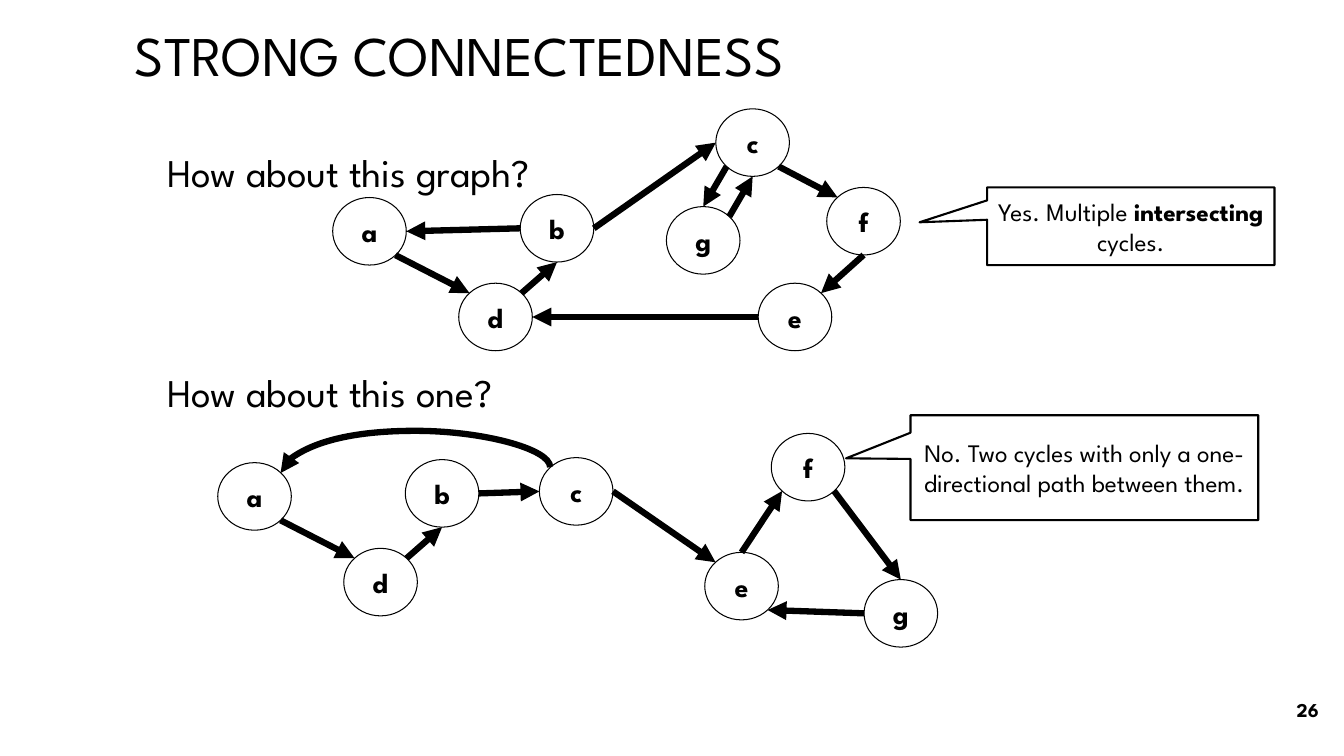
"""Build a slide that tests two directed graphs for strong connectedness."""
import math

import pptx
import pptx.dml.color
import pptx.enum.shapes
import pptx.enum.text
import pptx.oxml.ns
import pptx.util
from lxml import etree

Inches = pptx.util.Inches
SHAPE = pptx.enum.shapes.MSO_SHAPE
CONNECTOR = pptx.enum.shapes.MSO_CONNECTOR
ALIGN = pptx.enum.text.PP_ALIGN
BLACK = pptx.dml.color.RGBColor(0, 0, 0)
WHITE = pptx.dml.color.RGBColor(255, 255, 255)
FONT = "League Spartan"
NODE_WIDTH, NODE_HEIGHT = 0.73, 0.67
CURVE_RISE = 0.36

LABELS = [
    ("STRONG CONNECTEDNESS", (1.24, -0.02, 10.83, 1.12), dict(size=40)),
    ("How about this graph?", (1.56, 1.43, 10.52, 0.56), dict(size=28)),
    ("How about this one?", (1.56, 3.61, 10.52, 0.56), dict(size=28)),
    ("26", (12.58, 6.84, 0.6, 0.4), dict(size=14, bold=True, align=ALIGN.RIGHT)),
]
GRAPHS = [
    {
        "nodes": {"a": (3.3, 1.96), "b": (5.16, 1.93), "c": (7.1, 1.08), "d": (4.55, 2.81),
                  "e": (7.52, 2.81), "f": (8.2, 1.86), "g": (6.61, 2.05)},
        "edges": [("b", "E", "c", "W"), ("b", "W", "a", "E"), ("d", "NE", "b", "S"),
                  ("a", "SE", "d", "NW"), ("e", "W", "d", "E"), ("c", "SE", "f", "NW"),
                  ("c", "SW", "g", "N"), ("f", "S", "e", "NE"), ("g", "NE", "c", "S")],
        "curves": [],
    },
    {
        "nodes": {"a": (2.16, 4.59), "b": (4.02, 4.56), "c": (5.35, 4.54), "d": (3.41, 5.44),
                  "e": (6.99, 5.48), "f": (7.65, 4.3), "g": (8.57, 5.75)},
        "edges": [("b", "E", "c", "W"), ("d", "NE", "b", "S"), ("a", "SE", "d", "NW"),
                  ("f", "SE", "g", "N"), ("g", "W", "e", "SE"), ("e", "N", "f", "SW"),
                  ("c", "E", "e", "NW")],
        "curves": [("c", "NW", "a", "NE")],
    },
]
CALLOUTS = [
    ([("Yes. Multiple ", False), ("intersecting", True), (" cycles.", False)],
     (9.79, 1.86, 2.85, 0.77), (-0.735, -0.051)),
    ([("No. Two cycles with only a one-directional path between them.", False)],
     (9.03, 4.12, 3.45, 1.04), (-0.685, -0.089)),
]
COMPASS = ["E", "SE", "S", "SW", "W", "NW", "N", "NE"]


def write(shape, text, size=18, bold=False, align=ALIGN.LEFT):
    """Write a string, or a list of (string, bold) pairs, into a shape."""
    frame = shape.text_frame
    frame.word_wrap = True
    frame.vertical_anchor = pptx.enum.text.MSO_ANCHOR.MIDDLE
    para = frame.paragraphs[0]
    para.alignment = align
    for words, heavy in [(text, bold)] if isinstance(text, str) else text:
        span = para.add_run()
        span.text = words
        span.font.name = FONT
        span.font.size = pptx.util.Pt(size)
        span.font.bold = heavy
        span.font.color.rgb = BLACK


def add_outlined(page, kind, place, line_width):
    """Add a white shape with a black outline."""
    shape = page.shapes.add_shape(kind, *map(Inches, place))
    shape.shadow.inherit = False
    shape.fill.solid()
    shape.fill.fore_color.rgb = WHITE
    shape.line.color.rgb = BLACK
    shape.line.width = pptx.util.Pt(line_width)
    return shape


def rim_point(corner, direction):
    """Return the point of a node's rim in a compass direction."""
    angle = COMPASS.index(direction) * math.pi / 4
    return (corner[0] + NODE_WIDTH / 2 * (1 + math.cos(angle)),
            corner[1] + NODE_HEIGHT / 2 * (1 + math.sin(angle)))


def add_arrow(page, kind, start, end):
    """Add a thick connector with an arrowhead at its end."""
    arrow = page.shapes.add_connector(kind, *map(Inches, start + end))
    arrow.line.color.rgb = BLACK
    arrow.line.width = pptx.util.Pt(4.5)
    etree.SubElement(arrow.line._get_or_add_ln(), pptx.oxml.ns.qn("a:tailEnd"), type="triangle")
    etree.SubElement(arrow._element.spPr, pptx.oxml.ns.qn("a:effectLst"))
    return arrow


def add_arch(page, start, end):
    """Add a curved arrow that rises above both of its ends."""
    middle_x, middle_y = (start[0] + end[0]) / 2, (start[1] + end[1]) / 2
    drop, reach = end[1] - start[1], start[0] - end[0]
    drop = max(drop, 0.06)
    arch = add_arrow(page, CONNECTOR.CURVE,
                     (middle_x + drop / 2, middle_y + reach / 2),
                     (middle_x - drop / 2, middle_y - reach / 2))
    properties = arch._element.spPr
    properties.find(pptx.oxml.ns.qn("a:xfrm")).set("rot", str(270 * 60000))
    geometry = properties.find(pptx.oxml.ns.qn("a:prstGeom"))
    guides = geometry.find(pptx.oxml.ns.qn("a:avLst"))
    if guides is None:
        guides = etree.SubElement(geometry, pptx.oxml.ns.qn("a:avLst"))
    etree.SubElement(guides, pptx.oxml.ns.qn("a:gd"), name="adj1",
                     fmla=f"val {round(-CURVE_RISE / drop * 100000)}")


def add_graph(page, nodes, edges, curves):
    """Draw the nodes of a graph and the arrows between them."""
    for name, corner in nodes.items():
        node = add_outlined(page, SHAPE.OVAL, corner + (NODE_WIDTH, NODE_HEIGHT), 0.75)
        write(node, name, size=20, bold=True, align=ALIGN.CENTER)
    for source, leaving, target, entering in edges:
        add_arrow(page, CONNECTOR.STRAIGHT, rim_point(nodes[source], leaving),
                  rim_point(nodes[target], entering))
    for source, leaving, target, entering in curves:
        add_arch(page, rim_point(nodes[source], leaving), rim_point(nodes[target], entering))


def main():
    """Build and save the deck."""
    deck = pptx.Presentation()
    deck.slide_width, deck.slide_height = Inches(13.33), Inches(7.5)
    page = deck.slides.add_slide(deck.slide_layouts[6])
    for text, place, style in LABELS:
        write(page.shapes.add_textbox(*map(Inches, place)), text, **style)
    for graph in GRAPHS:
        add_graph(page, **graph)
    for text, place, tip in CALLOUTS:
        callout = add_outlined(page, SHAPE.RECTANGULAR_CALLOUT, place, 1.5)
        callout.adjustments[0], callout.adjustments[1] = tip
        write(callout, text, align=ALIGN.CENTER)
    deck.save("out.pptx")


if __name__ == "__main__":
    main()
